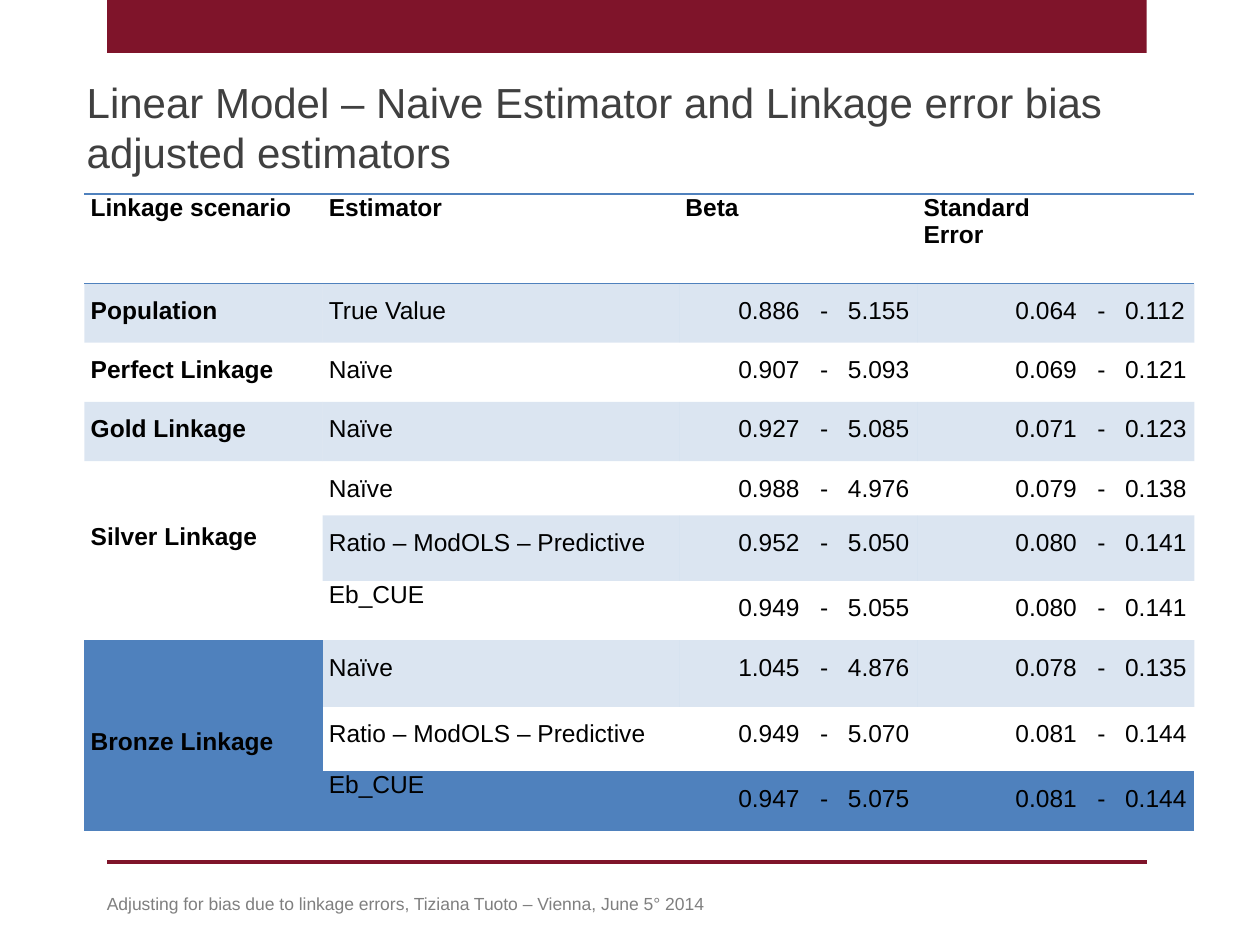
from dataclasses import dataclass

from lxml.etree import SubElement
from pptx import Presentation
from pptx.dml.color import RGBColor
from pptx.enum.shapes import MSO_CONNECTOR, MSO_SHAPE
from pptx.enum.text import MSO_ANCHOR
from pptx.oxml.ns import qn
from pptx.util import Inches, Pt

COLORS = {"crimson": "7F142A", "title": "404040", "footer": "7F7F7F",
          "text": "000000", "blue": "4F81BD"}
FONT = "Arial"
SLIDE_WIDTH, SLIDE_HEIGHT = Inches(10), Inches(7.5)
PLAIN_TABLE_STYLE = "{2D5ABB26-0587-4C30-8999-92F81FD0307C}"
HEADERS = ("Linkage scenario", "Estimator", "Beta", "Standard\nError")
COLUMN_WIDTHS = (18.9, 28.3, 18.9, 22)
VALUES_WIDTH = 14.2
TAB_STOPS = (6.5, 8.7)
HEADER_HEIGHT = 9.47
CELL_INSET = 0.5


@dataclass(frozen=True)
class Box:
    """Position and size in percent of the slide."""
    left: float
    top: float
    width: float
    height: float

    def lengths(self) -> tuple:
        return (across(self.left), down(self.top),
                across(self.width), down(self.height))


@dataclass(frozen=True)
class TextBlock:
    """A single-style text box."""
    text: str
    box: Box
    size: int
    color: str
    anchor: MSO_ANCHOR


@dataclass(frozen=True)
class Estimate:
    """One table row; an empty scenario continues the one above."""
    scenario: str
    estimator: str
    beta: tuple
    error: tuple
    height: float = 6.27
    span: int = 1


TEXT_BLOCKS = (
    TextBlock("Linear Model – Naive Estimator and Linkage error bias adjusted estimators",
              Box(5.9, 7.2, 88.3, 12.4), 24, "title", MSO_ANCHOR.MIDDLE),
    TextBlock("Adjusting for bias due to linkage errors, Tiziana Tuoto – Vienna, June 5° 2014",
              Box(7.5, 93.87, 51.3, 3.6), 10, "footer", MSO_ANCHOR.TOP),
)
COMBINED = "Ratio – ModOLS – Predictive"
ESTIMATES = (
    Estimate("Population", "True Value", ("0.886", "5.155"), ("0.064", "0.112")),
    Estimate("Perfect Linkage", "Naïve", ("0.907", "5.093"), ("0.069", "0.121")),
    Estimate("Gold Linkage", "Naïve", ("0.927", "5.085"), ("0.071", "0.123")),
    Estimate("Silver Linkage", "Naïve", ("0.988", "4.976"), ("0.079", "0.138"), 5.73, 3),
    Estimate("", COMBINED, ("0.952", "5.050"), ("0.080", "0.141"), 6.93),
    Estimate("", "Eb_CUE", ("0.949", "5.055"), ("0.080", "0.141")),
    Estimate("Bronze Linkage", "Naïve", ("1.045", "4.876"), ("0.078", "0.135"), 7.07, 3),
    Estimate("", COMBINED, ("0.949", "5.070"), ("0.081", "0.144"), 6.8),
    Estimate("", "Eb_CUE", ("0.947", "5.075"), ("0.081", "0.144")),
)


def across(percent: float) -> int:
    return round(SLIDE_WIDTH * percent / 100)


def down(percent: float) -> int:
    return round(SLIDE_HEIGHT * percent / 100)


def color(name: str) -> RGBColor:
    return RGBColor.from_string(COLORS[name])


def style_paragraph(paragraph, size: int, color_name: str, bold: bool = False) -> None:
    paragraph.font.name = FONT
    paragraph.font.size = Pt(size)
    paragraph.font.bold = bold
    paragraph.font.color.rgb = color(color_name)


def draw_text(slide, block: TextBlock) -> None:
    frame = slide.shapes.add_textbox(*block.box.lengths()).text_frame
    frame.word_wrap = True
    frame.vertical_anchor = block.anchor
    frame.text = block.text
    style_paragraph(frame.paragraphs[0], block.size, block.color)


def draw_frame(slide) -> None:
    banner = slide.shapes.add_shape(MSO_SHAPE.RECTANGLE, *Box(8.5, 0, 82.5, 5.6).lengths())
    banner.shadow.inherit = False
    banner.fill.solid()
    banner.fill.fore_color.rgb = color("crimson")
    banner.line.fill.background()
    rule = slide.shapes.add_connector(MSO_CONNECTOR.STRAIGHT, across(8.5), down(91.2),
                                      across(91), down(91.2))
    rule.line.color.rgb = color("crimson")
    rule.line.width = Pt(2)
    SubElement(rule._element.spPr, qn("a:effectLst"))


def add_border(cell, side: str) -> None:
    border = SubElement(cell._tc.get_or_add_tcPr(), qn(f"a:ln{side}"), w=str(Pt(1)))
    fill = SubElement(border, qn("a:solidFill"))
    SubElement(fill, qn("a:srgbClr"), val=COLORS["blue"])


def fill_cell(cell, shaded: bool) -> None:
    if not shaded:
        cell.fill.background()
        return
    cell.fill.solid()
    cell.fill.fore_color.rgb = color("blue")
    shade = cell._tc.tcPr.find(f".//{qn('a:srgbClr')}")
    SubElement(shade, qn("a:alpha"), val="20000")


def write_cell(cell, text: str, bold: bool = False, spacing: float = 1.0) -> None:
    cell.margin_left = cell.margin_right = across(CELL_INSET)
    cell.margin_top = cell.margin_bottom = 0
    cell.text = text
    for paragraph in cell.text_frame.paragraphs:
        paragraph.line_spacing = spacing
        style_paragraph(paragraph, 14, "text", bold)


def write_values(cell, values: tuple, column_width: float) -> None:
    write_cell(cell, "\t-\t".join(values), spacing=1.5)
    cell.margin_left = across(column_width - VALUES_WIDTH)
    cell.margin_right = 0
    properties = cell.text_frame.paragraphs[0]._p.get_or_add_pPr()
    tabs = SubElement(properties, qn("a:tabLst"))
    for stop in TAB_STOPS:
        SubElement(tabs, qn("a:tab"), pos=str(across(stop)), algn="l")
    properties.find(qn("a:defRPr")).addprevious(tabs)


def write_scenario(table, row: int, estimate: Estimate) -> None:
    cell = table.cell(row, 0)
    if estimate.span > 1:
        cell.merge(table.cell(row + estimate.span - 1, 0))
        cell.vertical_anchor = MSO_ANCHOR.MIDDLE
    write_cell(cell, estimate.scenario, True, 1.5)
    if estimate.scenario == "Silver Linkage":
        cell.margin_bottom = down(4.4)


def draw_table(slide) -> None:
    heights = (HEADER_HEIGHT, *(estimate.height for estimate in ESTIMATES))
    box = Box(6.7, 20.53, sum(COLUMN_WIDTHS), sum(heights))
    table = slide.shapes.add_table(len(heights), len(HEADERS), *box.lengths()).table
    table.first_row = table.horz_banding = False
    table._tbl.tblPr.find(qn("a:tableStyleId")).text = PLAIN_TABLE_STYLE
    for column, width in zip(table.columns, COLUMN_WIDTHS):
        column.width = across(width)
    for row, height in zip(table.rows, heights):
        row.height = down(height)
    for column, header in enumerate(HEADERS):
        write_cell(table.cell(0, column), header, True)
        add_border(table.cell(0, column), "T")
        add_border(table.cell(0, column), "B")
        add_border(table.cell(len(ESTIMATES), column), "B")
    for row, estimate in enumerate(ESTIMATES, start=1):
        if estimate.scenario:
            write_scenario(table, row, estimate)
        spacing = 1.0 if estimate.estimator == "Eb_CUE" else 1.5
        write_cell(table.cell(row, 1), estimate.estimator, spacing=spacing)
        for column, values in enumerate((estimate.beta, estimate.error), start=2):
            write_values(table.cell(row, column), values, COLUMN_WIDTHS[column])
    add_border(table.cell(len(ESTIMATES) - 2, 0), "B")
    for row in range(len(heights)):
        for column in range(len(HEADERS)):
            fill_cell(table.cell(row, column), row % 2 == 1)


def main() -> None:
    presentation = Presentation()
    presentation.slide_width, presentation.slide_height = SLIDE_WIDTH, SLIDE_HEIGHT
    slide = presentation.slides.add_slide(presentation.slide_layouts[6])
    draw_frame(slide)
    draw_table(slide)
    for block in TEXT_BLOCKS:
        draw_text(slide, block)
    presentation.save("out.pptx")


if __name__ == "__main__":
    main()
